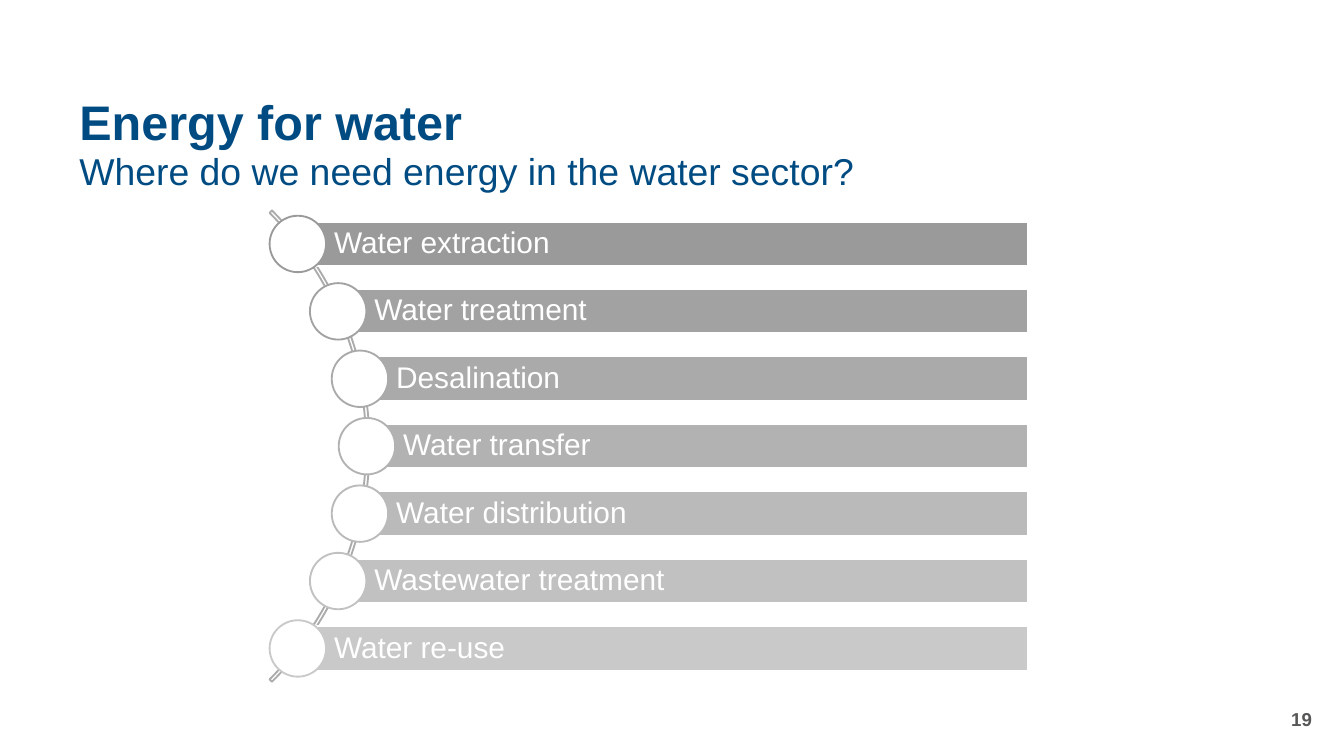
from math import sqrt

from lxml import etree
from pptx import Presentation
from pptx.dml.color import RGBColor
from pptx.enum.shapes import MSO_SHAPE
from pptx.enum.text import MSO_ANCHOR, MSO_AUTO_SIZE, PP_ALIGN
from pptx.oxml.ns import qn
from pptx.util import Inches, Pt

RECTANGLE, OVAL, BLOCK_ARC = MSO_SHAPE.RECTANGLE, MSO_SHAPE.OVAL, MSO_SHAPE.BLOCK_ARC
TOP, MIDDLE = MSO_ANCHOR.TOP, MSO_ANCHOR.MIDDLE
LEFT, RIGHT = PP_ALIGN.LEFT, PP_ALIGN.RIGHT
NO_AUTOFIT = MSO_AUTO_SIZE.NONE

COLORS = {"blue": "004C82", "white": "FFFFFF", "arc": "ABABAB", "number": "575756"}

# Label and gray of each step, from top to bottom
STEPS = [
    ("Water extraction", "9A9A9A"),
    ("Water treatment", "A2A2A2"),
    ("Desalination", "AAAAAA"),
    ("Water transfer", "B2B2B2"),
    ("Water distribution", "BABABA"),
    ("Wastewater treatment", "C1C1C1"),
    ("Water re-use", "C9C9C9"),
]

# Geometry in inches: the steps are spaced evenly down an arc
SLIDE_WIDTH = 10
SLIDE_HEIGHT = SLIDE_WIDTH * 9 / 16
ARC_X, ARC_Y, ARC_RADIUS = 0.27, 3.32, 2.48
STEP_RADIUS = 2.46
ROW_PITCH = 3.01 / (len(STEPS) - 1)
BAR_RIGHT, BAR_HEIGHT = 7.65, 0.33
CIRCLE_SIZE = 0.42


def rgb(color):
    return RGBColor.from_string(color)


def place(shape, left, top, width, height):
    shape.left, shape.top = Inches(left), Inches(top)
    shape.width, shape.height = Inches(width), Inches(height)


def remove_bullet(paragraph):
    properties = paragraph._p.get_or_add_pPr()
    properties.set("marL", "0")
    properties.set("indent", "0")
    etree.SubElement(properties, qn("a:buNone"))


def write(shape, text, size, color, insets, bold=False, align=LEFT,
          anchor=MIDDLE, line_spacing=0.9, bulleted_style=False):
    """Fill a shape with one formatted paragraph."""
    frame = shape.text_frame
    frame.word_wrap = True
    frame.auto_size = NO_AUTOFIT
    frame.vertical_anchor = anchor
    (frame.margin_left, frame.margin_top,
     frame.margin_right, frame.margin_bottom) = map(Inches, insets)
    frame.text = text
    paragraph = frame.paragraphs[0]
    if bulleted_style:
        remove_bullet(paragraph)
    paragraph.alignment = align
    paragraph.line_spacing = line_spacing
    paragraph.space_before = Pt(0)
    font = paragraph.font
    font.name, font.size, font.bold = "Arial", Pt(size), bold
    font.color.rgb = rgb(color)


def add_outlined(slide, kind, box, fill, line):
    shape = slide.shapes.add_shape(kind, *map(Inches, box))
    shape.shadow.inherit = False
    if fill:
        shape.fill.solid()
        shape.fill.fore_color.rgb = rgb(fill)
    else:
        shape.fill.background()
    shape.line.color.rgb = rgb(line)
    shape.line.width = Pt(1)
    return shape


def add_headings(slide):
    title, subtitle = slide.shapes.title, slide.placeholders[1]
    place(title, 0.49, 0.63, 9.37, 0.59)
    write(title, "Energy for water", 26, COLORS["blue"],
          (0.1, 0.05, 0.1, 0.05), bold=True)
    place(subtitle, 0.49, 1.14, 9.37, 0.3)
    write(subtitle, "Where do we need energy in the water sector?", 20,
          COLORS["blue"], (0.1, 0, 0.08, 0), anchor=TOP, bulleted_style=True)


def add_arc(slide):
    box = (ARC_X - ARC_RADIUS, ARC_Y - ARC_RADIUS, 2 * ARC_RADIUS, 2 * ARC_RADIUS)
    arc = add_outlined(slide, BLOCK_ARC, box, None, COLORS["arc"])
    # Start angle, end angle and thickness of the band
    for index, value in enumerate((189, 27, 0.005)):
        arc.adjustments[index] = value


def add_step(slide, row, label, gray):
    """Draw a bar that starts at the centre of its circle on the arc."""
    offset = (row - (len(STEPS) - 1) / 2) * ROW_PITCH
    center_x = ARC_X + sqrt(STEP_RADIUS ** 2 - offset ** 2)
    center_y = ARC_Y + offset
    bar = add_outlined(
        slide, RECTANGLE,
        (center_x, center_y - BAR_HEIGHT / 2, BAR_RIGHT - center_x, BAR_HEIGHT),
        gray, COLORS["white"])
    write(bar, label, 16, COLORS["white"], (0.27, 0.04, 0.04, 0.04))
    add_outlined(
        slide, OVAL,
        (center_x - CIRCLE_SIZE / 2, center_y - CIRCLE_SIZE / 2,
         CIRCLE_SIZE, CIRCLE_SIZE),
        COLORS["white"], gray)


def add_page_number(slide):
    box = slide.shapes.add_textbox(*map(Inches, (7.61, 5.2, 2.25, 0.3)))
    write(box, "19", 10, COLORS["number"], (0.1, 0.05, 0.1, 0.05),
          bold=True, align=RIGHT, line_spacing=1.0)


def main():
    presentation = Presentation()
    presentation.slide_width = Inches(SLIDE_WIDTH)
    presentation.slide_height = Inches(SLIDE_HEIGHT)
    slide = presentation.slides.add_slide(presentation.slide_layouts[1])

    add_headings(slide)
    add_arc(slide)
    for row, (label, gray) in enumerate(STEPS):
        add_step(slide, row, label, gray)
    add_page_number(slide)

    presentation.save("out.pptx")


if __name__ == "__main__":
    main()
